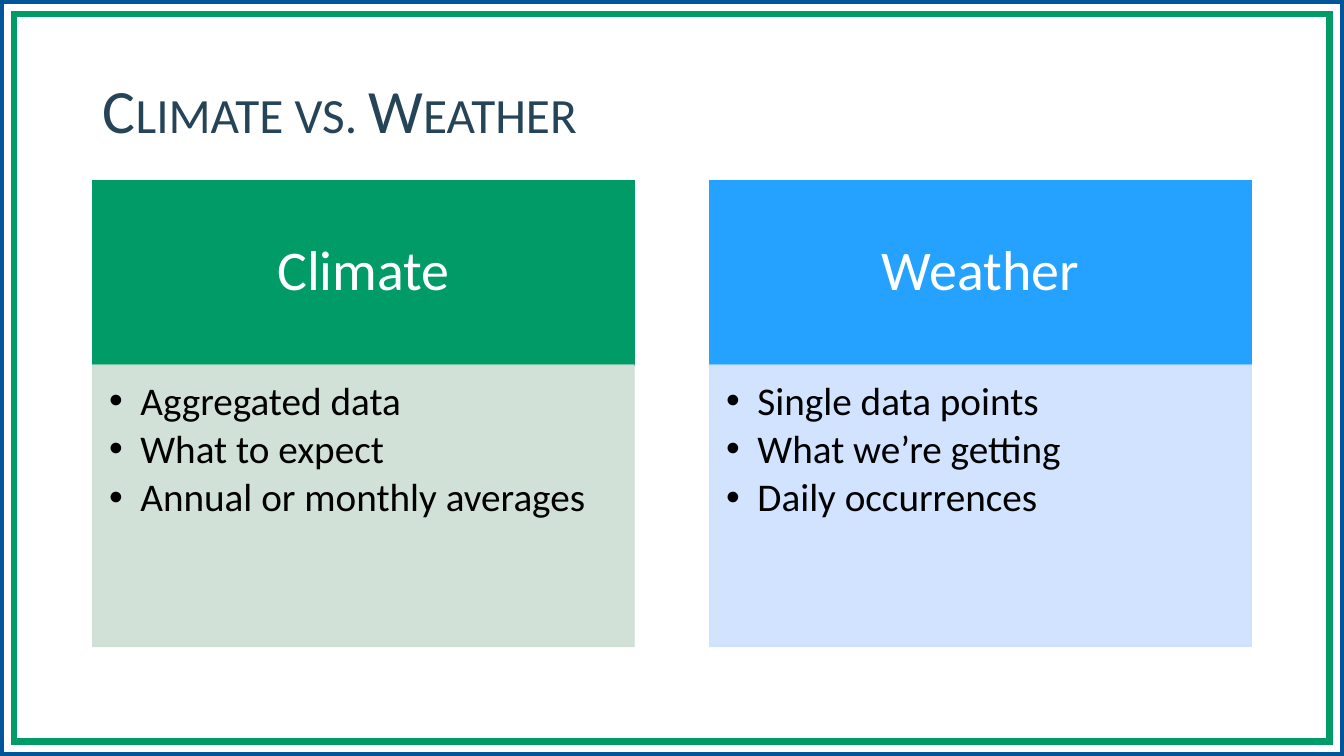
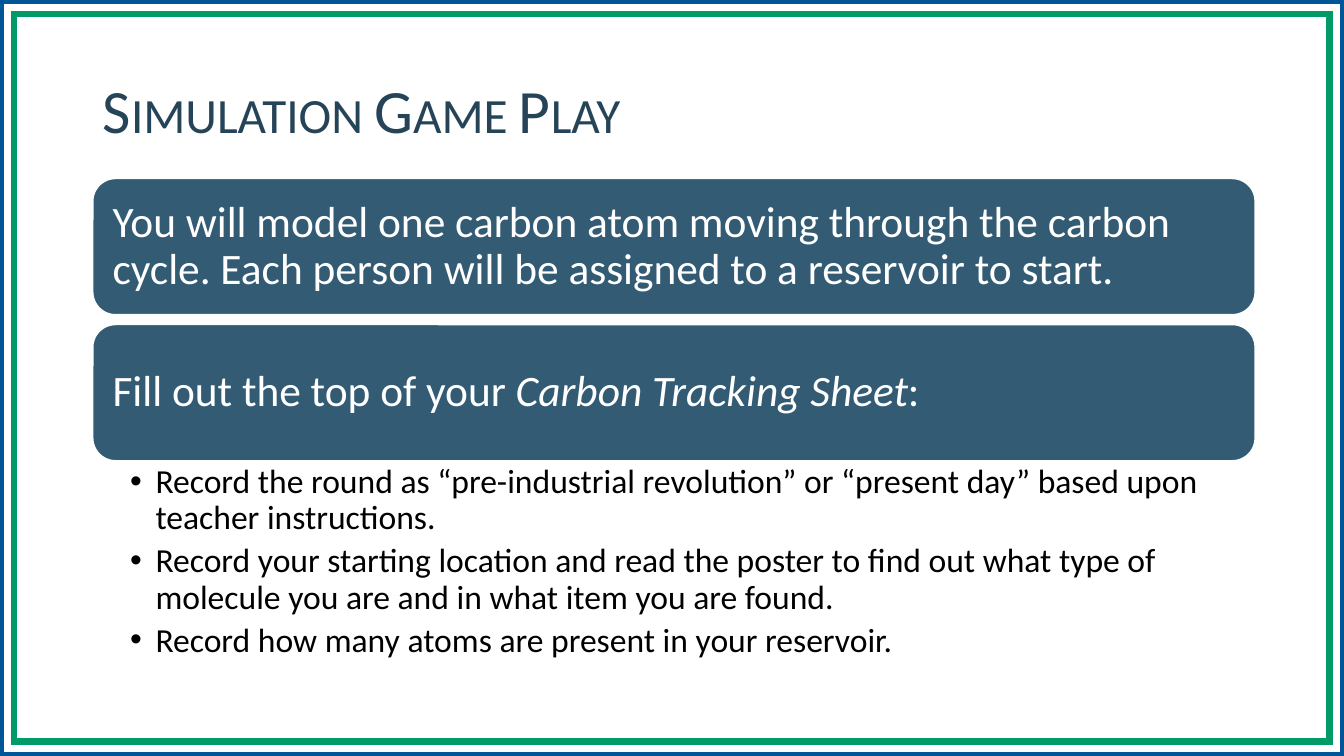
from lxml.etree import SubElement
from pptx import Presentation
from pptx.dml.color import RGBColor
from pptx.enum.shapes import MSO_SHAPE
from pptx.enum.text import MSO_ANCHOR, PP_ALIGN
from pptx.oxml.ns import qn
from pptx.util import Cm, Pt

HUES = {
    "navy": "005699", "green": "009B67", "title": "264457",
    "sky": "25A2FF", "sage": "CCDED3", "ice": "CDE0FF",
    "slate": "335B74", "white": "FFFFFF", "black": "000000",
}
FONT = "Calibri"
WIDE, HIGH = 33.87, 19.05
LEFT = 2.34

CARDS = [
    ("Climate", "green", "sage",
     ["Aggregated data", "What to expect", "Annual or monthly averages"]),
    ("Weather", "sky", "ice",
     ["Single data points", "What we’re getting", "Daily occurrences"]),
]
STEPS = [
    [("You will model one carbon atom moving through the carbon cycle. "
      "Each person will be assigned to a reservoir to start.", False)],
    [("Fill out the top of your ", False), ("Carbon Tracking Sheet", True),
     (":", False)],
]
TASKS = [
    "Record the round as “pre-industrial revolution” or “present day” "
    "based upon teacher instructions.",
    "Record your starting location and read the poster to find out what "
    "type of molecule you are and in what item you are found.",
    "Record how many atoms are present in your reservoir.",
]


def color(name):
    return RGBColor.from_string(HUES[name])


def add_box(slide, spot, fill=None, line=None, width=1, kind=MSO_SHAPE.RECTANGLE,
            alpha=None):
    box = slide.shapes.add_shape(kind, *map(Cm, spot))
    box.shadow.inherit = False
    if fill:
        box.fill.solid()
        box.fill.fore_color.rgb = color(fill)
    else:
        box.fill.background()
    box.line.color.rgb = color(line or fill)
    box.line.width = Pt(width)
    if kind == MSO_SHAPE.RECTANGLE:
        SubElement(box.line._get_or_add_ln(), qn("a:miter")).set("lim", "800000")
    if alpha:
        for tone in box._element.spPr.iter(qn("a:srgbClr")):
            SubElement(tone, qn("a:alpha")).set("val", str(alpha * 1000))
    return box


def set_frame(box, pads, anchor):
    frame = box.text_frame
    frame.word_wrap = True
    frame.vertical_anchor = anchor
    (frame.margin_left, frame.margin_top,
     frame.margin_right, frame.margin_bottom) = map(Cm, pads)
    return frame


def style(para, size, hue, align=PP_ALIGN.LEFT, after=0):
    para.alignment = align
    para.line_spacing = 0.9
    para.space_after = Pt(after)
    for run in para.runs:
        run.font.size = Pt(size)
        run.font.name = FONT
        run.font.color.rgb = color(hue)


def add_list(box, items, pads, size, hang, after):
    frame = set_frame(box, pads, MSO_ANCHOR.TOP)
    frame.text = "\n".join(items)
    for para in frame.paragraphs:
        props = para._p.get_or_add_pPr()
        props.set("marL", str(Cm(hang)))
        props.set("indent", str(-Cm(hang)))
        SubElement(props, qn("a:buFont")).set("typeface", "Arial")
        SubElement(props, qn("a:buChar")).set("char", "•")
        style(para, size, "black", after=after)


def add_slide(deck, title):
    slide = deck.slides.add_slide(deck.slide_layouts[6])
    add_box(slide, (0, 0, WIDE, HIGH), line="navy", width=6)
    gap = 0.36
    add_box(slide, (gap, gap, WIDE - 2 * gap, HIGH - 2 * gap),
            line="green", width=4.5)
    box = slide.shapes.add_textbox(*map(Cm, (LEFT, 1.02, 29.21, 3.68)))
    frame = set_frame(box, (0.25, 0.13, 0.25, 0.13), MSO_ANCHOR.MIDDLE)
    frame.text = title
    para = frame.paragraphs[0]
    style(para, 44, "title")
    para.runs[0]._r.get_or_add_rPr().set("cap", "small")
    return slide


def add_cards(slide):
    top, width, head, body, pitch = 4.55, 13.64, 4.65, 7.09, 15.55
    for i, (name, dark, pale, items) in enumerate(CARDS):
        x = LEFT + i * pitch
        box = add_box(slide, (x, top, width, head), dark)
        frame = set_frame(box, (0.79, 0.46, 0.79, 0.46), MSO_ANCHOR.MIDDLE)
        frame.text = name
        style(frame.paragraphs[0], 40, "white", PP_ALIGN.CENTER)
        box = add_box(slide, (x, top + head, width, body), pale, alpha=90)
        add_list(box, items, (0.41, 0.41, 0.56, 0.61), 28, 0.79, 4.2)


def add_steps(slide):
    top, width, high, pitch = 4.5, 29.29, 3.43, 3.68
    for i, parts in enumerate(STEPS):
        box = add_box(slide, (LEFT, top + i * pitch, width, high), "slate",
                      "white", kind=MSO_SHAPE.ROUNDED_RECTANGLE)
        frame = set_frame(box, [0.33] * 4, MSO_ANCHOR.MIDDLE)
        para = frame.paragraphs[0]
        for text, slant in parts:
            run = para.add_run()
            run.text = text
            run.font.italic = slant
        style(para, 31, "white")
    low = top + pitch + high
    box = slide.shapes.add_textbox(*map(Cm, (LEFT, low, width, 5.36)))
    add_list(box, TASKS, (0.94, 0.1, 0.61, 0.1), 24, 0.64, 4.8)


def main():
    deck = Presentation()
    deck.slide_width, deck.slide_height = Cm(WIDE), Cm(HIGH)
    add_cards(add_slide(deck, "Climate vs. Weather"))
    add_steps(add_slide(deck, "Simulation Game Play"))
    deck.save("out.pptx")


if __name__ == "__main__":
    main()
